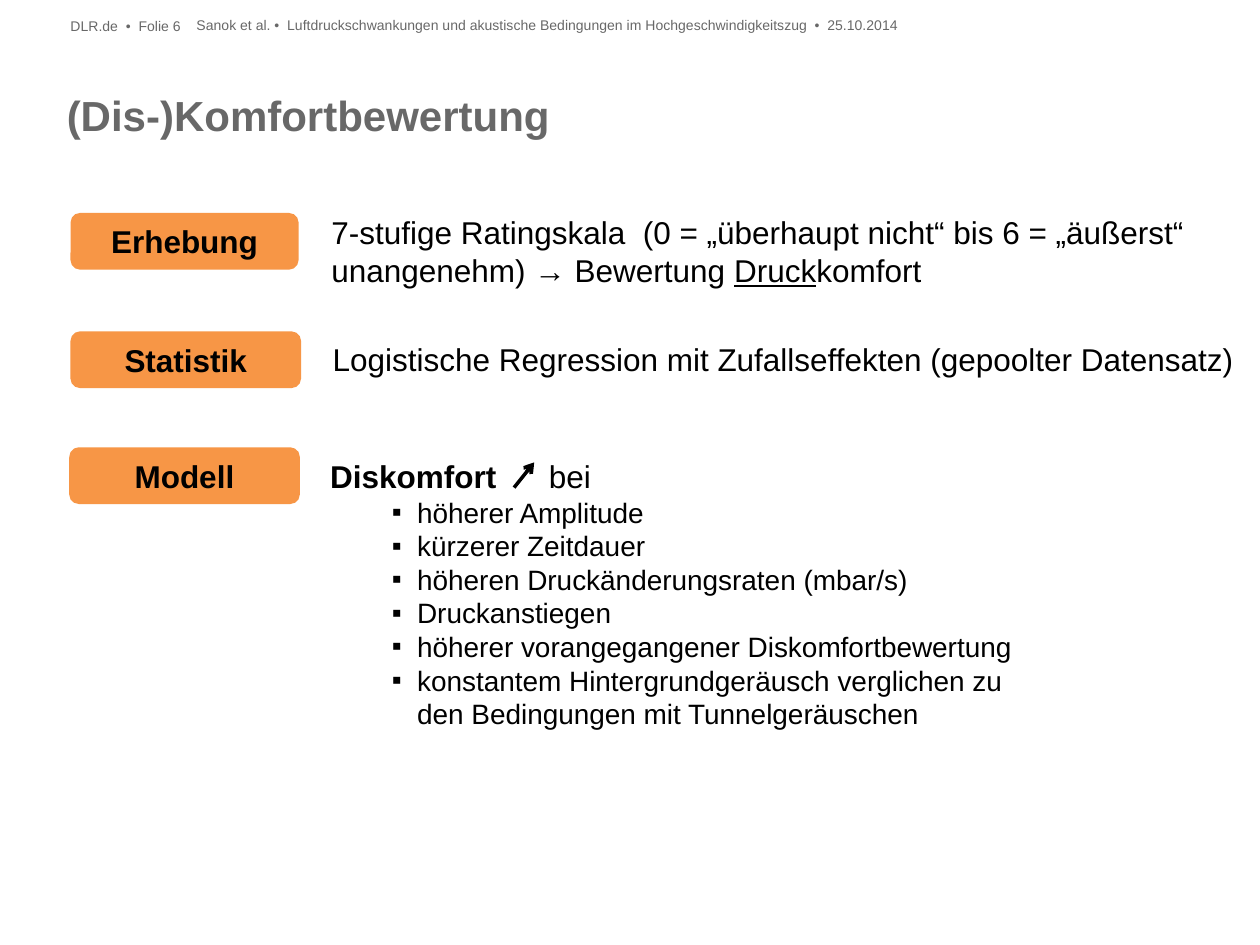
"""Build the slide on rating (dis)comfort, laid out on a 100 by 75 grid."""
from dataclasses import dataclass
from typing import Any

import pptx
import pptx.dml.color
import pptx.enum.shapes
import pptx.enum.text
import pptx.oxml.ns
import pptx.util
from lxml import etree

COLUMNS, ROWS = 100, 75
FONT = "Arial"
BLACK, GREY, ORANGE = "000000", "686868", "F79646"
ANCHOR = pptx.enum.text.MSO_ANCHOR
ALIGN = pptx.enum.text.PP_ALIGN

prs = pptx.Presentation()
prs.slide_width = pptx.util.Inches(10)
prs.slide_height = pptx.util.Inches(7.5)


@dataclass(frozen=True)
class Box:
    """A rectangle in grid columns and rows."""

    column: float
    row: float
    columns: float
    rows: float

    def emu(self) -> tuple[int, int, int, int]:
        """Return left, top, width and height as slide lengths."""
        return x(self.column), y(self.row), x(self.columns), y(self.rows)


@dataclass(frozen=True)
class Label:
    """A heading in an orange rounded box."""

    text: str
    box: Box


@dataclass(frozen=True)
class Note:
    """A plain text box with its runs and format."""

    runs: list[tuple[str, dict[str, Any]]]
    box: Box
    size: float = 18
    color: str = BLACK
    top: float = 0
    anchor: Any = ANCHOR.TOP


LABELS = [
    Label("Erhebung", Box(5.6, 16.9, 18.1, 4.5)),
    Label("Statistik", Box(5.6, 26.3, 18.3, 4.5)),
    Label("Modell", Box(5.5, 35.5, 18.3, 4.5)),
]
NOTES = [
    Note([("7-stufige Ratingskala  (0 = „überhaupt nicht“ bis 6 = „äußerst“ "
           "unangenehm) → Bewertung ", {}),
          ("Druck", {"underline": True}), ("komfort", {})],
         Box(26.3, 13.9, 73.7, 9.1), top=3),
    Note([("Logistische Regression mit Zufallseffekten (gepoolter Datensatz)", {})],
         Box(26.4, 24, 72.4, 6.1), top=3),
    Note([("Sanok et al. •  Luftdruckschwankungen und akustische Bedingungen im "
           "Hochgeschwindigkeitszug  •  25.10.2014", {})],
         Box(15.6, 1.2, 78, 1.6), 8, GREY, anchor=ANCHOR.MIDDLE),
    Note([("DLR.de  •  Folie 6", {})], Box(5.6, 1.4, 11.4, 1.6), 8, GREY),
]
FACTORS = [
    "höherer Amplitude",
    "kürzerer Zeitdauer",
    "höheren Druckänderungsraten (mbar/s)",
    "Druckanstiegen",
    "höherer vorangegangener Diskomfortbewertung",
    "konstantem Hintergrundgeräusch verglichen zu den Bedingungen mit Tunnelgeräuschen",
]


def x(columns: float) -> int:
    """Turn grid columns into a slide length."""
    return round(prs.slide_width * columns / COLUMNS)


def y(rows: float) -> int:
    """Turn grid rows into a slide length."""
    return round(prs.slide_height * rows / ROWS)


def rgb(value: str) -> Any:
    """Turn a hex string into a colour."""
    return pptx.dml.color.RGBColor.from_string(value)


def add_element(parent: Any, tag: str, **attributes: str) -> Any:
    """Append a DrawingML element."""
    return etree.SubElement(parent, pptx.oxml.ns.qn(tag), attributes)


def add_run(p: Any, text: str, *, size: float = 18, color: str = BLACK,
            bold: bool = False, underline: bool = False, tracking: float = 0) -> None:
    """Append formatted text to a paragraph, tracking given in points."""
    r = p.add_run()
    r.text = text
    r.font.name, r.font.size = FONT, pptx.util.Pt(size)
    r.font.bold, r.font.underline = bold, underline
    r.font.color.rgb = rgb(color)
    if tracking:
        r._r.get_or_add_rPr().set("spc", str(round(tracking * 100)))


def frame(sp: Any, top: float = 0, anchor: Any = ANCHOR.TOP) -> Any:
    """Set insets, wrapping and anchor, and return the text frame."""
    tf = sp.text_frame
    tf.word_wrap = True
    tf.auto_size = pptx.enum.text.MSO_AUTO_SIZE.NONE
    tf.margin_left = tf.margin_right = tf.margin_bottom = 0
    tf.margin_top = y(top)
    tf.vertical_anchor = anchor
    return tf


def set_paragraph(p: Any, *, align: Any = ALIGN.LEFT, bullet: str = "") -> None:
    """Set alignment, spacing and bullet of a paragraph."""
    p.alignment, p.line_spacing = align, 1.0
    p.space_before = pptx.util.Pt(0)
    p.level = 1 if bullet else 0
    properties = p._p.get_or_add_pPr()
    properties.set("marL", str(x(6.9) if bullet else 0))
    properties.set("indent", str(x(-2) if bullet else 0))
    if bullet:
        add_element(properties, "a:buFont", typeface=FONT)
        add_element(properties, "a:buChar", char=bullet)
    else:
        add_element(properties, "a:buNone")


def place(sp: Any, box: Box) -> None:
    """Move a placeholder to a box."""
    sp.left, sp.top, sp.width, sp.height = box.emu()


def draw_label(s: Any, label: Label) -> None:
    """Draw one orange heading."""
    kind = pptx.enum.shapes.MSO_SHAPE.ROUNDED_RECTANGLE
    sp = s.shapes.add_shape(kind, *label.box.emu())
    sp.shadow.inherit = False
    sp.fill.solid()
    sp.fill.fore_color.rgb = rgb(ORANGE)
    sp.line.fill.background()
    p = frame(sp, anchor=ANCHOR.MIDDLE).paragraphs[0]
    set_paragraph(p, align=ALIGN.CENTER)
    add_run(p, label.text, bold=True)


def draw_note(s: Any, note: Note) -> None:
    """Draw one plain text box."""
    sp = s.shapes.add_textbox(*note.box.emu())
    p = frame(sp, note.top, note.anchor).paragraphs[0]
    set_paragraph(p)
    for text, style in note.runs:
        add_run(p, text, size=note.size, color=note.color, **style)


def draw_rising_arrow(s: Any) -> None:
    """Draw the arrow that stands for an increase."""
    line = s.shapes.add_connector(pptx.enum.shapes.MSO_CONNECTOR.STRAIGHT,
                                  x(40.8), y(38.7), x(42.4), y(36.7))
    line.line.color.rgb = rgb(BLACK)
    line.line.width = pptx.util.Pt(2)
    add_element(line.line._get_or_add_ln(), "a:tailEnd", type="arrow")
    add_element(line._element.spPr, "a:effectLst")


def main() -> None:
    """Build and save the slide."""
    s = prs.slides.add_slide(prs.slide_layouts[1])
    title, body = s.shapes.title, s.placeholders[1]
    place(title, Box(5.3, 7.1, 89.4, 8.1))
    p = frame(title).paragraphs[0]
    set_paragraph(p)
    add_run(p, "(Dis-)Komfortbewertung", size=24, color=GREY, bold=True)

    place(body, Box(26.2, 29.4, 55.3, 19.9))
    tf = frame(body, top=6.9)
    p = tf.paragraphs[0]
    set_paragraph(p)
    add_run(p, "Diskomfort", bold=True)
    add_run(p, " ", tracking=25)
    add_run(p, "bei")
    for factor in FACTORS:
        p = tf.add_paragraph()
        set_paragraph(p, bullet="▪")
        add_run(p, factor, size=16)

    for label in LABELS:
        draw_label(s, label)
    for note in NOTES:
        draw_note(s, note)
    draw_rising_arrow(s)
    prs.save("out.pptx")


if __name__ == "__main__":
    main()
